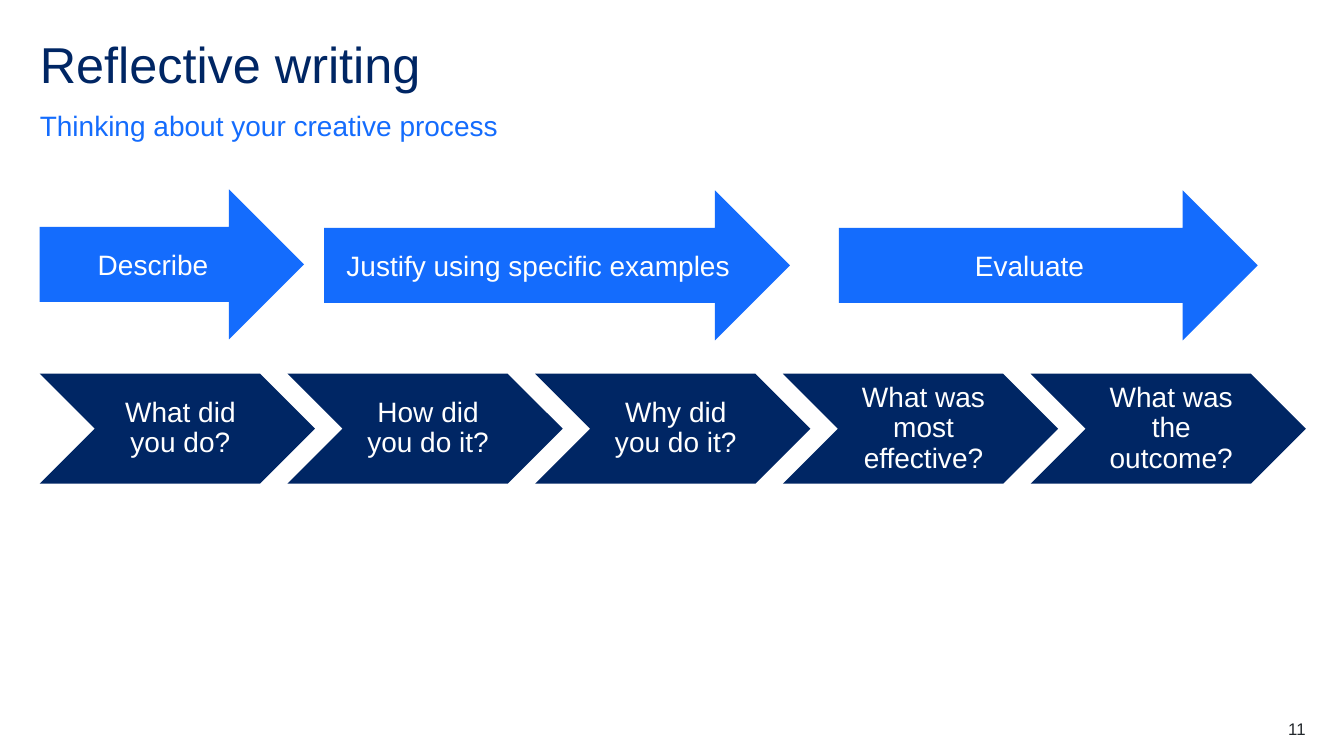
"""Build the reflective writing slide: three stage arrows above a chevron chain."""
from dataclasses import dataclass

import pptx
import pptx.dml.color
import pptx.enum.shapes
import pptx.enum.text
import pptx.util

Pt = pptx.util.Pt
ALIGN = pptx.enum.text.PP_ALIGN
ANCHOR = pptx.enum.text.MSO_ANCHOR
SHAPE = pptx.enum.shapes.MSO_SHAPE
FONT = "Arial"
COLORS = {"navy": "002664", "blue": "146CFD", "white": "FFFFFF", "ink": "22272B"}

LEFT = 28.4
CHEVRON_TOP, CHEVRON_W, CHEVRON_H = 266.9, 196.6, 78.6
CHEVRON_PITCH = 0.9 * CHEVRON_W
ARROW_H = 107.2


@dataclass
class Box:
    left: float
    top: float
    width: float
    height: float


@dataclass
class Style:
    size: float
    color: str
    align: ALIGN = ALIGN.LEFT
    anchor: ANCHOR = ANCHOR.TOP
    spacing: float = 1.0
    after: float = 0
    insets: tuple[float, float, float, float] = (0, 0, 0, 0)


@dataclass
class Label:
    text: str
    box: Box
    style: Style


@dataclass
class Block:
    label: Label
    kind: SHAPE
    fill: str


ARROW_STYLE = Style(20, "white", ALIGN.CENTER, ANCHOR.MIDDLE, insets=(7.2, 3.6, 7.2, 3.6))
CHEVRON_STYLE = Style(20, "white", ALIGN.CENTER, ANCHOR.MIDDLE, 0.9, insets=(6.8, 2.2, 2.4, 2.2))

LABELS = [
    Label("Reflective writing", Box(LEFT, 28.3, 904, 43), Style(36, "navy", spacing=0.9)),
    Label("Thinking about your creative process", Box(LEFT, 77, 904, 24.5),
          Style(20, "blue", anchor=ANCHOR.BOTTOM, spacing=1.5, after=12)),
    Label("11", Box(876, 513.2, 56.6, 14.2), Style(12, "ink", ALIGN.RIGHT)),
]
STAGES = [
    Label("Describe", Box(LEFT, 135.2, 188.8, ARROW_H), ARROW_STYLE),
    Label("Justify using specific examples", Box(231.5, 136, 332.8, ARROW_H), ARROW_STYLE),
    Label("Evaluate", Box(599.2, 136, 299.2, ARROW_H), ARROW_STYLE),
]
QUESTIONS = [
    "What did you do?",
    "How did you do it?",
    "Why did you do it?",
    "What was most effective?",
    "What was the outcome?",
]


def rgb(name: str) -> pptx.dml.color.RGBColor:
    """Return a named colour."""
    return pptx.dml.color.RGBColor.from_string(COLORS[name])


def place(box: Box) -> tuple[int, int, int, int]:
    """Return the box as slide lengths."""
    return Pt(box.left), Pt(box.top), Pt(box.width), Pt(box.height)


def write(tf: pptx.text.text.TextFrame, text: str, style: Style) -> None:
    """Fill a text frame with one styled paragraph."""
    tf.word_wrap = True
    tf.vertical_anchor = style.anchor
    tf.margin_left, tf.margin_top, tf.margin_right, tf.margin_bottom = map(Pt, style.insets)
    p = tf.paragraphs[0]
    p.alignment = style.align
    p.line_spacing = style.spacing
    p.space_after = Pt(style.after)
    r = p.add_run()
    r.text = text
    r.font.name = FONT
    r.font.size = Pt(style.size)
    r.font.color.rgb = rgb(style.color)


def add_label(s: pptx.slide.Slide, label: Label) -> None:
    """Add a text box."""
    sp = s.shapes.add_textbox(*place(label.box))
    write(sp.text_frame, label.text, label.style)


def add_block(s: pptx.slide.Slide, block: Block) -> None:
    """Add a filled preset shape with its text."""
    sp = s.shapes.add_shape(block.kind, *place(block.label.box))
    sp.shadow.inherit = False
    sp.fill.solid()
    sp.fill.fore_color.rgb = rgb(block.fill)
    sp.line.fill.background()
    write(sp.text_frame, block.label.text, block.label.style)


def main() -> None:
    """Build and save the slide."""
    prs = pptx.Presentation()
    prs.slide_width, prs.slide_height = Pt(960), Pt(540)
    s = prs.slides.add_slide(prs.slide_layouts[6])
    for label in LABELS:
        add_label(s, label)
    for stage in STAGES:
        add_block(s, Block(stage, SHAPE.RIGHT_ARROW, "blue"))
    for i, question in enumerate(QUESTIONS):
        box = Box(LEFT + i * CHEVRON_PITCH, CHEVRON_TOP, CHEVRON_W, CHEVRON_H)
        add_block(s, Block(Label(question, box, CHEVRON_STYLE), SHAPE.CHEVRON, "navy"))
    prs.save("out.pptx")


if __name__ == "__main__":
    main()
